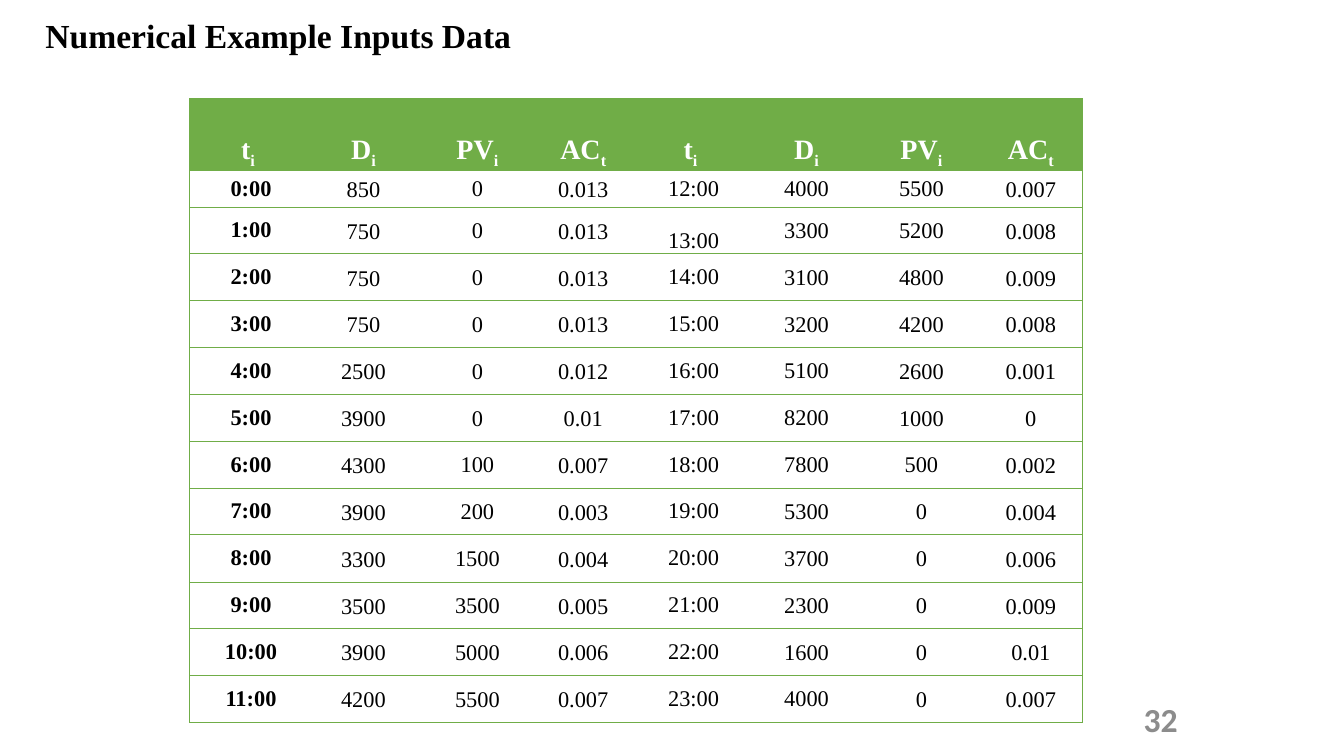
"""Build the slide that lists the hourly inputs of the numerical example."""
from dataclasses import dataclass

from lxml import etree
from pptx import Presentation
from pptx import util as u
from pptx.dml import color
from pptx.enum import text
from pptx.oxml import ns

PX = 9144
GREEN, BLACK, WHITE, GREY = "70AD47", "000000", "FFFFFF", "8C8C8C"
SERIF = "Times New Roman"
MID, LOW = text.MSO_ANCHOR.MIDDLE, text.MSO_ANCHOR.BOTTOM
LEFT, MIDST, RIGHT = text.PP_ALIGN.LEFT, text.PP_ALIGN.CENTER, text.PP_ALIGN.RIGHT


@dataclass
class Col:
    head: str
    width: int
    vals: list[str]
    pad: int = 7
    lead: float = 1.07
    dent: int = 0
    bold: bool = False


def hours(first: int) -> list[str]:
    return [f"{hour}:00" for hour in range(first, first + 12)]


COLS = [
    Col("t_i", 116, hours(0), lead=1, dent=6, bold=True),
    Col("D_i", 113, "850 750 750 750 2500 3900 4300 3900 3300 3500 3900 4200".split(), pad=1),
    Col("PV_i", 113, "0 0 0 0 0 0 100 200 1500 3500 5000 5500".split()),
    Col("AC_t", 97, ("0.013 0.013 0.013 0.013 0.012 0.01 "
                     "0.007 0.003 0.004 0.005 0.006 0.007").split(), pad=1),
    Col("t_i", 116, hours(12), lead=1, dent=6),
    Col("D_i", 114, "4000 3300 3100 3200 5100 8200 7800 5300 3700 2300 1600 4000".split(),
        pad=1, lead=1),
    Col("PV_i", 114, "5500 5200 4800 4200 2600 1000 500 0 0 0 0 0".split()),
    Col("AC_t", 103, ("0.007 0.008 0.009 0.008 0.001 0 "
                      "0.002 0.004 0.006 0.009 0.01 0.007").split(), pad=1),
]
ROWS = [51, 37] + [46, 47] * 5 + [46]


def px(num: int) -> u.Emu:
    return u.Emu(num * PX)


def rgb(code: str) -> color.RGBColor:
    return color.RGBColor.from_string(code)


def write(frame, words: str, *, size: int, hue: str = BLACK, font: str = SERIF,
          bold: bool = True, align=MIDST, lead: float = 1, dent: int = 0) -> None:
    para = frame.paragraphs[0]
    para.alignment, para.line_spacing = align, lead
    if dent:
        props = para._p.get_or_add_pPr()
        props.set("marL", str(px(dent)))
        props.set("indent", "0")
    for step, part in enumerate(words.split("_")):
        run = para.add_run()
        run.text = part
        run.font.size, run.font.name, run.font.bold = u.Pt(size), font, bold
        run.font.color.rgb = rgb(hue)
        if step:
            run.font._element.set("baseline", "-25000")


def edge(cell, sides: str) -> None:
    props = cell._tc.get_or_add_tcPr()
    for side in "LRTB":
        line = etree.SubElement(props, ns.qn(f"a:ln{side}"), w=str(u.Pt(0.5)))
        if side in sides:
            fill = etree.SubElement(line, ns.qn("a:solidFill"))
            etree.SubElement(fill, ns.qn("a:srgbClr"), val=GREEN)
        else:
            etree.SubElement(line, ns.qn("a:noFill"))


def draw_cell(cell, col: Col, row: int, sides: str) -> None:
    edge(cell, sides)
    pad = 7 if row == 0 else col.pad
    cell.margin_left = cell.margin_right = px(pad)
    cell.margin_top, cell.margin_bottom = px(1 if pad == 1 else 0), 0
    cell.vertical_anchor = LOW if col.vals[row - 1] == "13:00" and row else MID
    if row == 0:
        cell.fill.solid()
        cell.fill.fore_color.rgb = rgb(GREEN)
        write(cell.text_frame, col.head, size=20, hue=WHITE, lead=2)
    else:
        cell.fill.background()
        write(cell.text_frame, col.vals[row - 1], size=16, bold=col.bold,
              lead=col.lead, dent=col.dent)


def draw_table(slide) -> None:
    wide = sum(col.width for col in COLS)
    frame = slide.shapes.add_table(len(ROWS), len(COLS), px(188), px(98),
                                   px(wide), px(sum(ROWS)))
    grid = frame.table
    grid.first_row = grid.horz_banding = False
    for row, high in enumerate(ROWS):
        grid.rows[row].height = px(high)
    for pos, col in enumerate(COLS):
        grid.columns[pos].width = px(col.width)
        side = {0: "L", len(COLS) - 1: "R"}.get(pos, "")
        for row in range(len(ROWS)):
            draw_cell(grid.cell(row, pos), col, row, "TB" + side)


def main() -> None:
    deck = Presentation()
    deck.slide_width, deck.slide_height = px(1333), px(750)
    slide = deck.slides.add_slide(deck.slide_layouts[5])
    draw_table(slide)

    title = slide.shapes.title
    title.left, title.top, title.width, title.height = map(px, (35, 10, 742, 50))
    title.text_frame.vertical_anchor = text.MSO_ANCHOR.TOP
    write(title.text_frame, "Numerical Example Inputs Data", size=24, align=LEFT)

    page = slide.shapes.add_textbox(*map(px, (878, 693, 300, 40))).text_frame
    page.word_wrap, page.vertical_anchor = True, MID
    write(page, "32", size=24, hue=GREY, font="Calibri", align=RIGHT)
    deck.save("out.pptx")


if __name__ == "__main__":
    main()
